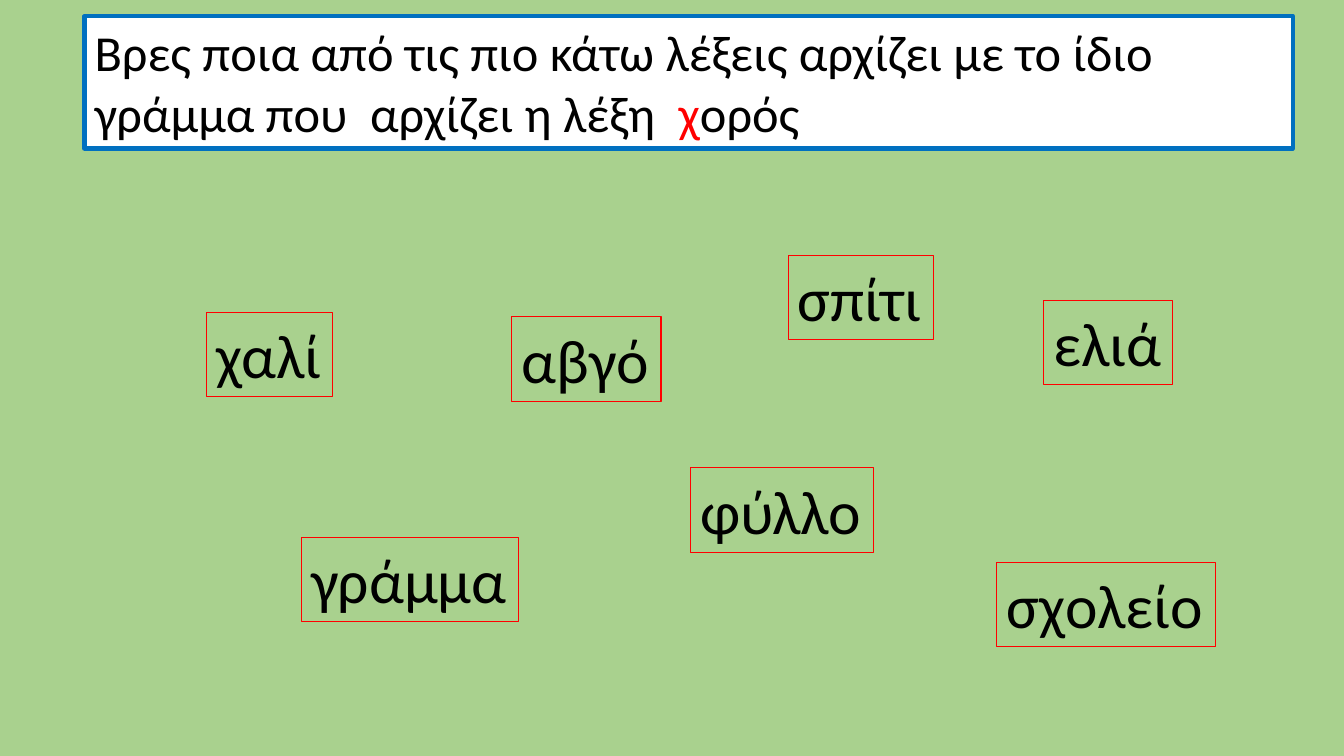
"""Build a Greek first-letter exercise slide with an instruction and seven word boxes."""
from pptx import Presentation
from pptx.dml.color import RGBColor
from pptx.enum.text import MSO_ANCHOR, MSO_AUTO_SIZE as AutoSize, PP_ALIGN
from pptx.util import Cm, Pt

COLORS = {
    "background": "A9D18E",
    "panel": "FFFFFF",
    "panel_border": "0070C0",
    "accent": "FF0000",
    "text": "000000",
}
WORD_HEIGHT = 2.13
WORDS = [
    ("γράμμα", 7.59, 13.54, 5.49),
    ("φύλλο", 17.4, 11.79, 4.62),
    ("ελιά", 26.31, 7.57, 3.25),
    ("αβγό", 12.9, 7.98, 3.76),
    ("χαλί", 5.21, 7.87, 3.18),
    ("σχολείο", 25.12, 14.17, 5.51),
    ("σπίτι", 19.86, 6.43, 3.66),
]
INSTRUCTION = [
    ("Βρες ποια από τις πιο κάτω λέξεις αρχίζει με το ίδιο γράμμα που  αρχίζει η λέξη  ", "text"),
    ("χ", "accent"),
    ("ορός", "text"),
]


def rgb(name):
    return RGBColor.from_string(COLORS[name])


def write_text(shape, text, size, color="text", wrap=False):
    frame = shape.text_frame
    frame.word_wrap = wrap
    frame.auto_size = AutoSize.SHAPE_TO_FIT_TEXT
    frame.vertical_anchor = MSO_ANCHOR.TOP
    paragraph = frame.paragraphs[0]
    paragraph.alignment = PP_ALIGN.LEFT
    run = paragraph.add_run()
    run.text = text
    run.font.name = "Calibri"
    run.font.size = Pt(size)
    run.font.color.rgb = rgb(color)


presentation = Presentation()
presentation.slide_width = Cm(33.87)
presentation.slide_height = Cm(19.05)
slide = presentation.slides.add_slide(presentation.slide_layouts[5])
slide.background.fill.solid()
slide.background.fill.fore_color.rgb = rgb("background")

title = slide.shapes.title
title.left, title.top, title.width, title.height = Cm(2.13), Cm(0.41), Cm(30.45), Cm(3.33)
title.fill.solid()
title.fill.fore_color.rgb = rgb("panel")
title.line.color.rgb = rgb("panel_border")
title.line.width = Pt(3)
for text, color in INSTRUCTION:
    write_text(title, text, size=36, color=color, wrap=True)

for word, left, top, width in WORDS:
    box = slide.shapes.add_textbox(Cm(left), Cm(top), Cm(width), Cm(WORD_HEIGHT))
    box.line.color.rgb = rgb("accent")
    box.line.width = Pt(0.75)
    write_text(box, word, size=44)

presentation.save("out.pptx")
